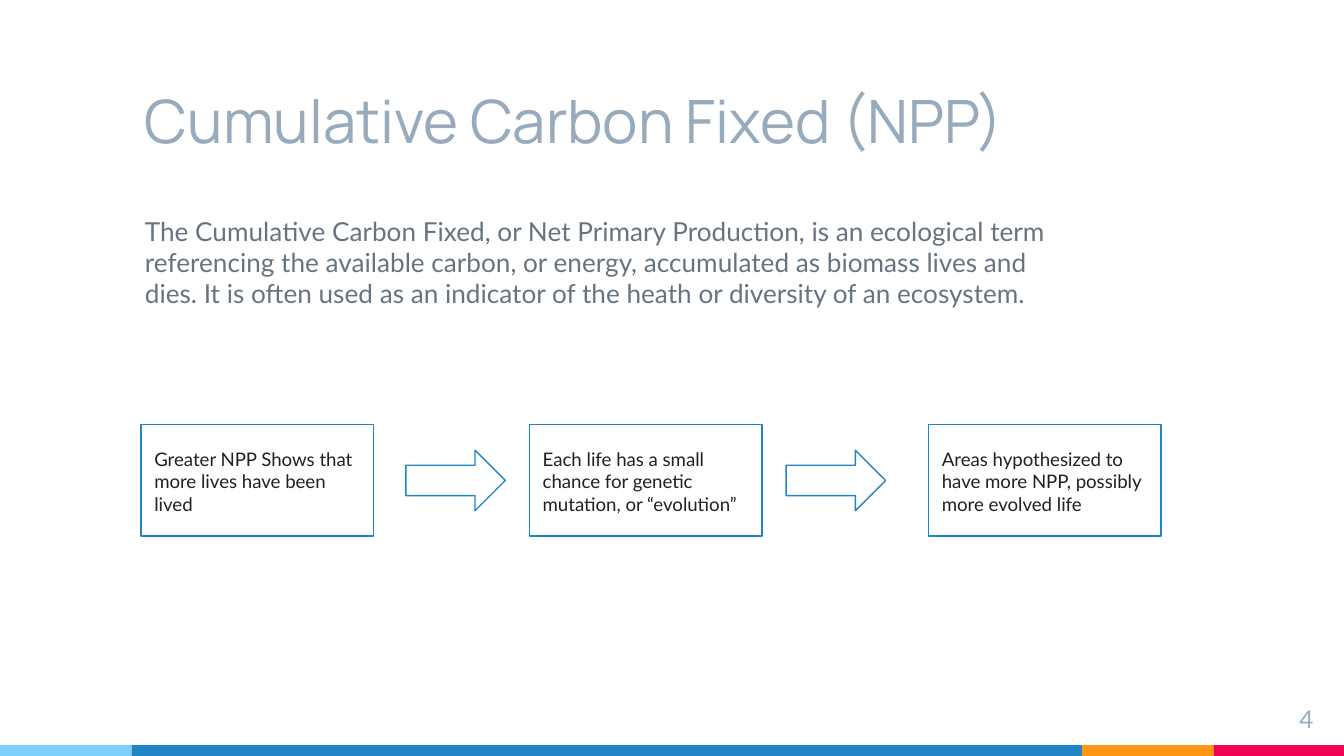
from dataclasses import dataclass
from itertools import accumulate

from pptx import Presentation
from pptx.dml.color import RGBColor
from pptx.enum.shapes import MSO_SHAPE as Shape
from pptx.enum.text import MSO_ANCHOR as Anchor, PP_ALIGN as Align
from pptx.util import Inches, Pt

WIDTH = 10
HEIGHT = WIDTH * 9 / 16
EDGE, MAIN = 0.98, 7.07  # outer and main columns of the page grid
STRIP = 0.08
STEP_TOP, STEP_WIDTH, STEP_HEIGHT = 3.16, 1.73, 0.83
CAPTION_TOP, CAPTION_HEIGHT = 3.23, 0.51
ARROW_WIDTH, ARROW_HEIGHT = 0.74, 0.45


@dataclass(frozen=True)
class Theme:
    sky: str = "7ECEFD"
    blue: str = "2185C5"
    orange: str = "FF9715"
    red: str = "F20253"
    white: str = "FFFFFF"
    # Text styles: font, size, colour
    title: tuple = ("Manrope", 32, "97ABBC")
    body: tuple = ("Lato", 14, "677480")
    number: tuple = ("Lato", 13, "97ABBC")
    step: tuple = ("Lato", 10, "202122")


THEME = Theme()

STEPS = [
    (1.05, "Greater NPP Shows that more lives have been lived"),
    (3.94, "Each life has a small chance for genetic mutation, or “evolution”"),
    (6.91, "Areas hypothesized to have more NPP, possibly more evolved life"),
]
ARROWS = [3.02, 5.85]


def add_text(page, area, text, style, anchor=Anchor.TOP, align=Align.LEFT):
    box = page.shapes.add_textbox(*map(Inches, area))
    layout = {"word_wrap": True, "vertical_anchor": anchor}
    layout.update({f"margin_{side}": Inches(0.1)
                   for side in ("left", "top", "right", "bottom")})
    for name, value in layout.items():
        setattr(box.text_frame, name, value)
    para = box.text_frame.paragraphs[0]
    para.alignment = align
    span = para.add_run()
    span.text = text
    font, size, colour = style
    for name, value in {"name": font, "size": Pt(size)}.items():
        setattr(span.font, name, value)
    span.font.color.rgb = RGBColor.from_string(colour)


def add_figure(page, kind, area, fill, line=None):
    figure = page.shapes.add_shape(kind, *map(Inches, area))
    figure.shadow.inherit = False
    figure.fill.solid()
    figure.fill.fore_color.rgb = RGBColor.from_string(fill)
    if line:
        figure.line.color.rgb = RGBColor.from_string(line)
        figure.line.width = Pt(0.75)
    else:
        figure.line.fill.background()


def add_strip(page):
    widths = [EDGE, MAIN, EDGE, WIDTH - MAIN - 2 * EDGE]
    lefts = accumulate(widths, initial=0)
    colours = [THEME.sky, THEME.blue, THEME.orange, THEME.red]
    for left, width, colour in zip(lefts, widths, colours):
        add_figure(page, Shape.RECTANGLE,
                   (left, HEIGHT - STRIP, width, STRIP), colour)


def add_step(page, left, text):
    add_figure(page, Shape.RECTANGLE,
               (left, STEP_TOP, STEP_WIDTH, STEP_HEIGHT),
               THEME.white, THEME.blue)
    add_text(page, (left, CAPTION_TOP, STEP_WIDTH, CAPTION_HEIGHT),
             text, THEME.step)


def add_arrow(page, left):
    # Arrows sit on the centre line of the boxes
    top = STEP_TOP + (STEP_HEIGHT - ARROW_HEIGHT) / 2
    add_figure(page, Shape.RIGHT_ARROW,
               (left, top, ARROW_WIDTH, ARROW_HEIGHT),
               THEME.white, THEME.blue)


def main():
    deck = Presentation()
    deck.slide_width, deck.slide_height = Inches(WIDTH), Inches(HEIGHT)
    page = deck.slides.add_slide(deck.slide_layouts[6])

    # Coloured strip along the bottom
    add_strip(page)

    # Title, explanation and page number
    add_text(page, (EDGE, 0.32, MAIN, 0.94), "Cumulative Carbon Fixed (NPP)",
             THEME.title, anchor=Anchor.BOTTOM)
    add_text(page, (EDGE, 1.5, MAIN, 1.02),
             "The Cumulative Carbon Fixed, or Net Primary Production, is an "
             "ecological term referencing the available carbon, or energy, "
             "accumulated as biomass lives and dies. It is often used as an "
             "indicator of the heath or diversity of an ecosystem.",
             THEME.body)
    add_text(page, (9.27, 5.14, 0.6, 0.34), "4", THEME.number,
             align=Align.RIGHT)

    # Three steps with block arrows between them
    for left, text in STEPS:
        add_step(page, left, text)
    for left in ARROWS:
        add_arrow(page, left)

    deck.save("out.pptx")


if __name__ == "__main__":
    main()
